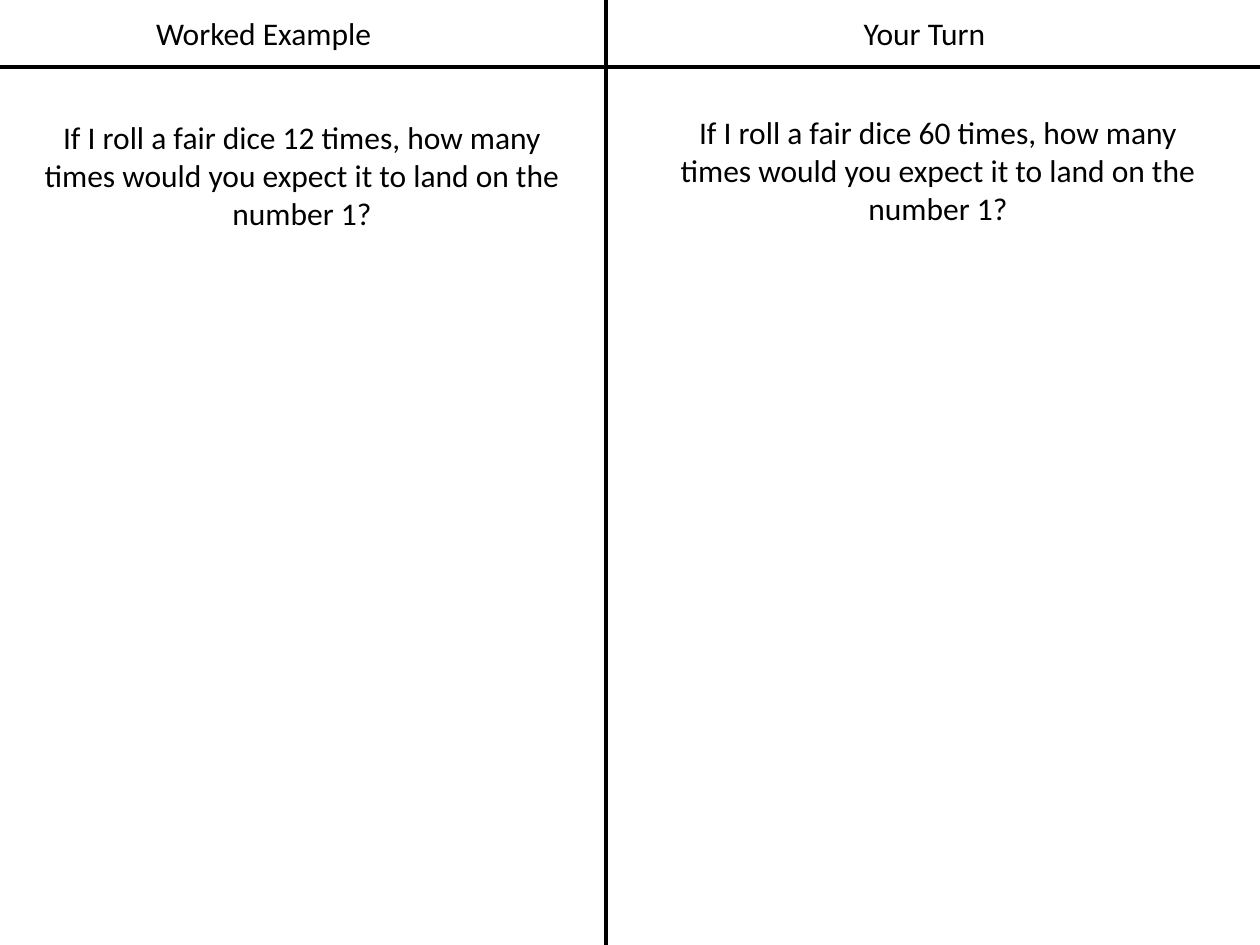
from dataclasses import dataclass

from lxml.etree import SubElement
from pptx import Presentation
from pptx.dml.color import RGBColor
from pptx.enum.shapes import MSO_CONNECTOR as Link
from pptx.enum.text import MSO_AUTO_SIZE as Fit, PP_ALIGN as Align
from pptx.oxml.ns import qn
from pptx.util import Emu, Pt

WIDE, HIGH = 1260, 945
SPLIT, RULE = 606, 67
BLACK = "000000"


@dataclass
class Box:
    left: int
    top: int
    width: int
    height: int


@dataclass
class Column:
    title: str
    head: Box
    rolls: int
    body: Box


COLUMNS = [
    Column("Worked Example", Box(142, 8, 243, 50), 12, Box(24, 112, 556, 127)),
    Column("Your Turn", Box(803, 8, 243, 50), 60, Box(660, 107, 556, 127)),
]


def px(count: int) -> Emu:
    return Emu(round(count * 914400 / 126))


def color(code: str) -> RGBColor:
    return RGBColor.from_string(code)


def write(slide, text: str, box: Box, *, size: int = 18, font: str = "Calibri",
          fill: str = BLACK, align=Align.CENTER) -> None:
    shape = slide.shapes.add_textbox(
        px(box.left), px(box.top), px(box.width), px(box.height))
    frame = shape.text_frame
    frame.word_wrap = True
    frame.auto_size = Fit.SHAPE_TO_FIT_TEXT
    para = frame.paragraphs[0]
    para.alignment = align
    run = para.add_run()
    run.text = text
    run.font.size = Pt(size)
    run.font.name = font
    run.font.color.rgb = color(fill)


def rule(slide, x1: int, y1: int, x2: int, y2: int) -> None:
    line = slide.shapes.add_connector(
        Link.STRAIGHT, px(x1), px(y1), px(x2), px(y2))
    line.line.color.rgb = color(BLACK)
    line.line.width = Pt(2.5)
    SubElement(line._element.spPr, qn("a:effectLst"))


def main() -> None:
    deck = Presentation()
    deck.slide_width, deck.slide_height = px(WIDE), px(HIGH)
    slide = deck.slides.add_slide(deck.slide_layouts[6])
    for col in COLUMNS:
        write(slide, col.title, col.head)
    rule(slide, SPLIT, 0, SPLIT, HIGH)
    rule(slide, 0, RULE, WIDE, RULE)
    for col in COLUMNS:
        write(slide, f"If I roll a fair dice {col.rolls} times, how many times "
                     "would you expect it to land on the number 1?", col.body)
    deck.save("out.pptx")


if __name__ == "__main__":
    main()
